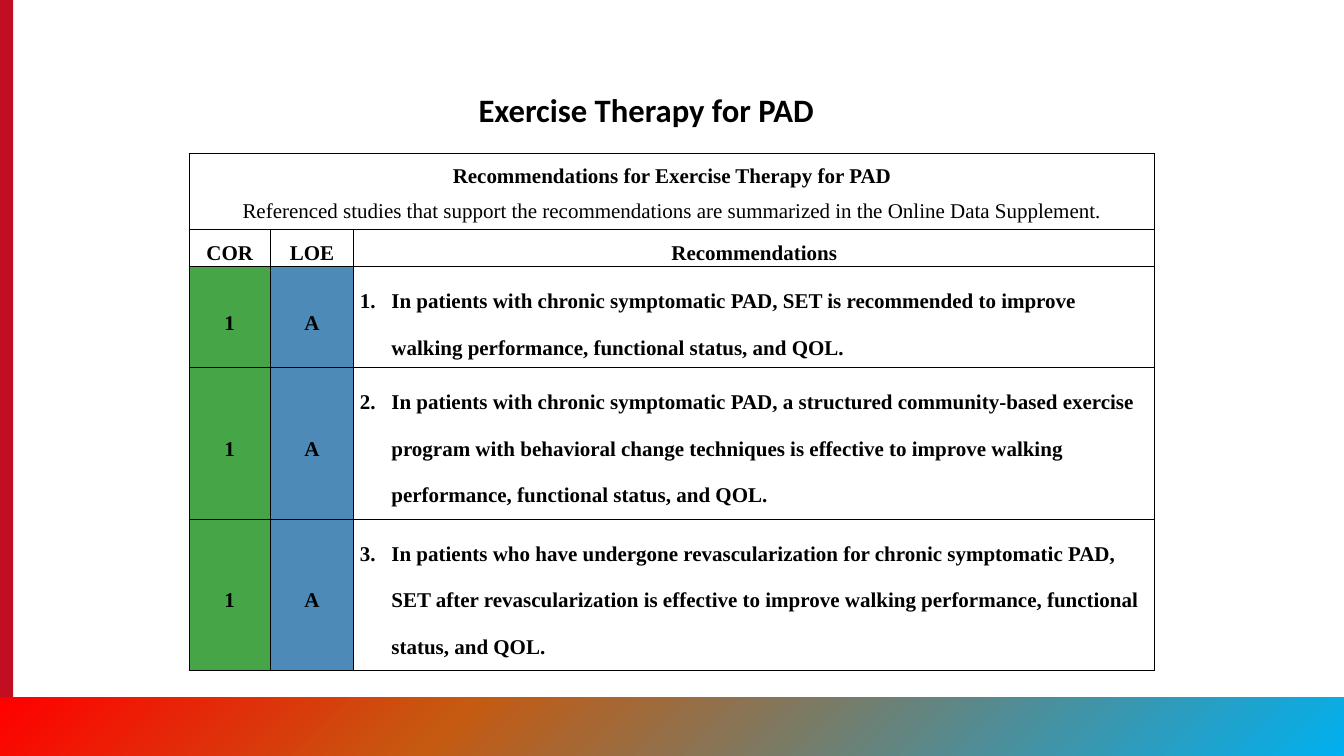
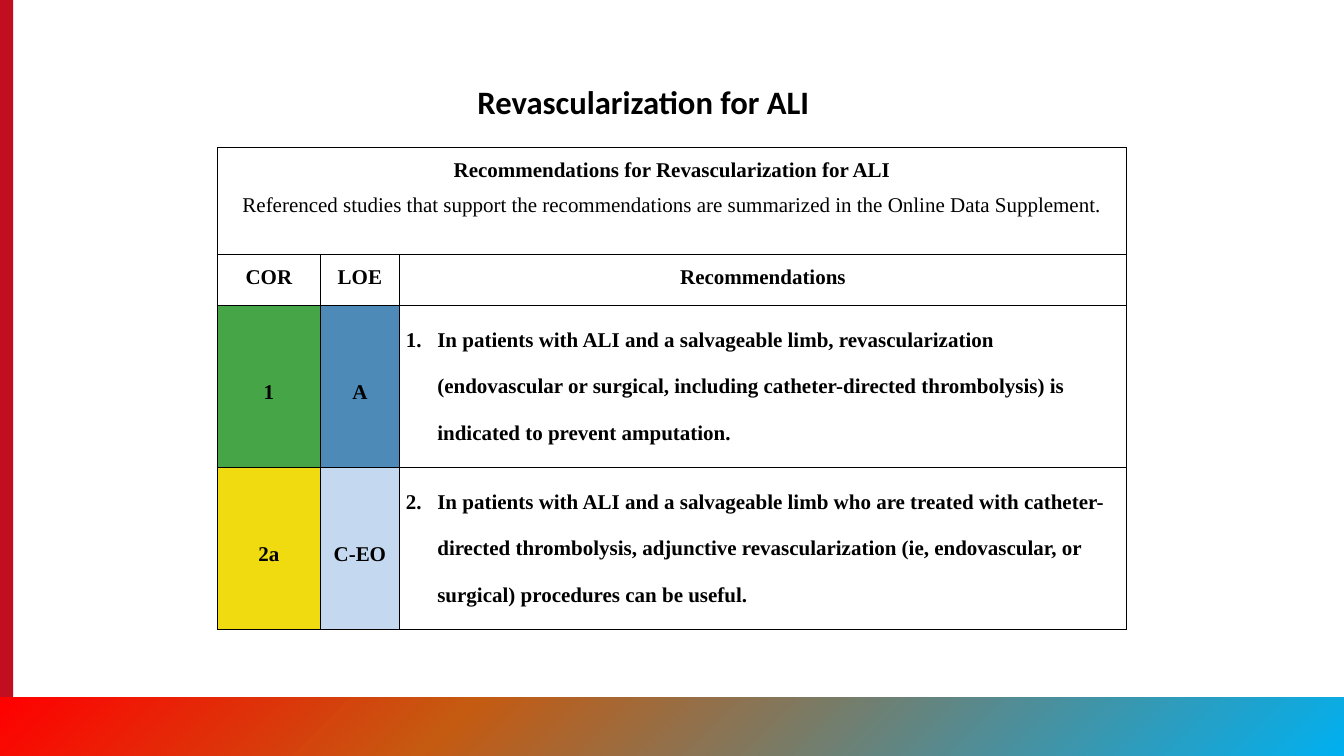
import pptx
import pptx.util
import pptx.oxml
import pptx.oxml.ns
import pptx.dml.color
import pptx.enum.shapes
import pptx.enum.text

Pt = pptx.util.Pt
RGBColor = pptx.dml.color.RGBColor
Align = pptx.enum.text.PP_ALIGN
Anchor = pptx.enum.text.MSO_ANCHOR

BLACK = RGBColor(0x00, 0x00, 0x00)
RED = RGBColor(0xC1, 0x0E, 0x21)
GREEN = RGBColor(0x45, 0xA5, 0x47)
BLUE = RGBColor(0x4E, 0x8A, 0xB7)
YELLOW = RGBColor(0xF0, 0xDA, 0x10)
PALE = RGBColor(0xC4, 0xD9, 0xF0)
STOPS = [
    (0, RGBColor(0x00, 0xB0, 0xF0)),
    (66, RGBColor(0xC5, 0x5A, 0x11)),
    (100, RGBColor(0xFF, 0x00, 0x00)),
]

WIDTH, HEIGHT = 1152, 648
BAND = 50.4
TITLE_FONT = "Calibri"
TABLE_FONT = "Times New Roman"
SOURCE = ("Referenced studies that support the recommendations "
          "are summarized in the Online Data Supplement.")
HEADS = ["COR", "LOE", "Recommendations"]
FILLS = {"1": GREEN, "2a": YELLOW, "A": BLUE, "C-EO": PALE}


def make(xml):
    head, tail = xml.split(" ", 1)
    return pptx.oxml.parse_xml(f"{head} {pptx.oxml.ns.nsdecls('a')} {tail}")


def style(para, font, size, bold=True):
    for run in para.runs:
        run.font.name = font
        run.font.size = Pt(size)
        run.font.bold = bold
        run.font.color.rgb = BLACK


def add_bar(slide, left, top, width, height):
    bar = slide.shapes.add_shape(
        pptx.enum.shapes.MSO_SHAPE.RECTANGLE,
        Pt(left), Pt(top), Pt(width), Pt(height))
    bar.shadow.inherit = False
    bar.line.fill.background()
    bar.fill.solid()
    bar.fill.fore_color.rgb = RED
    return bar


def blend(bar):
    stops = "".join(
        f'<a:gs pos="{place * 1000}"><a:srgbClr val="{color}"/></a:gs>'
        for place, color in STOPS)
    grad = make(f'<a:gradFill rotWithShape="1"><a:gsLst>{stops}</a:gsLst>'
                '<a:lin ang="2700000" scaled="0"/></a:gradFill>')
    props = bar.element.spPr
    props.replace(props.find(pptx.oxml.ns.qn("a:solidFill")), grad)
    bar.rotation = 180


def share(layout, bars):
    for count, bar in enumerate(bars):
        bar.element.xpath(".//p:cNvPr")[0].set("id", str(50 + count))
        layout.shapes.element.append(bar.element)


def set_title(slide, text, left, top):
    title = slide.shapes.title
    title.left, title.top = Pt(left), Pt(top)
    title.width, title.height = Pt(346), Pt(48)
    frame = title.text_frame
    frame.text = text
    frame.auto_size = pptx.enum.text.MSO_AUTO_SIZE.NONE
    frame.vertical_anchor = Anchor.BOTTOM
    para = frame.paragraphs[0]
    para.alignment = Align.LEFT
    para.line_spacing = 0.9
    style(para, TITLE_FONT, 28)


def edge(cell):
    props = cell._tc.get_or_add_tcPr()
    for side in "LRTB":
        props.append(make(
            f'<a:ln{side} w="12700"><a:solidFill><a:srgbClr val="{BLACK}"/>'
            f'</a:solidFill></a:ln{side}>'))


def dress(cell, fill=None):
    edge(cell)
    cell.margin_left = cell.margin_right = Pt(5.4)
    cell.margin_top = cell.margin_bottom = 0
    if fill is None:
        cell.fill.background()
    else:
        cell.fill.solid()
        cell.fill.fore_color.rgb = fill


def center(cell, *lines):
    frame = cell.text_frame
    frame.text = "\n".join(lines)
    for spot, para in enumerate(frame.paragraphs):
        para.alignment = Align.CENTER
        para.line_spacing = 1.5
        style(para, TABLE_FONT, 18, spot == 0)


def number(cell, start, text):
    cell.text_frame.text = text
    para = cell.text_frame.paragraphs[0]
    props = para._p.get_or_add_pPr()
    props.set("marL", str(Pt(27)))
    props.set("indent", str(-Pt(27)))
    props.append(make(f'<a:buAutoNum type="arabicPeriod" startAt="{start}"/>'))
    props.append(make(f'<a:tabLst ><a:tab pos="{Pt(36)}" algn="l"/></a:tabLst>'))
    para.line_spacing = 2.0
    style(para, TABLE_FONT, 18)


def add_grid(slide, spot, cols, rows, head, items):
    frame = slide.shapes.add_table(
        len(rows), len(cols), Pt(spot[0]), Pt(spot[1]),
        Pt(sum(cols)), Pt(sum(rows)))
    table = frame.table
    table.first_row = table.horz_banding = False
    for col, width in zip(table.columns, cols):
        col.width = Pt(width)
    for row, tall in zip(table.rows, rows):
        row.height = Pt(tall)
    for row in range(2):
        for col in range(len(cols)):
            dress(table.cell(row, col))
    table.cell(0, 0).merge(table.cell(0, len(cols) - 1))
    center(table.cell(0, 0), head, SOURCE)
    for col, text in enumerate(HEADS):
        center(table.cell(1, col), text)
    for count, (*grades, text) in enumerate(items, 1):
        for col, grade in enumerate(grades):
            cell = table.cell(count + 1, col)
            dress(cell, FILLS[grade])
            cell.vertical_anchor = Anchor.MIDDLE
            center(cell, grade)
        cell = table.cell(count + 1, 2)
        dress(cell)
        number(cell, count, text)


def main():
    deck = pptx.Presentation()
    deck.slide_width, deck.slide_height = Pt(WIDTH), Pt(HEIGHT)
    layout = deck.slide_layouts[5]

    slide = deck.slides.add_slide(layout)
    side = add_bar(slide, 0, 0, 11.3, HEIGHT)
    base = add_bar(slide, 0, HEIGHT - BAND, WIDTH, BAND)
    blend(base)
    share(layout, [side, base])

    set_title(slide, "Exercise Therapy for PAD", 403, 66.5)
    add_grid(
        slide, (162, 131.5), [69.8, 71.3, 686.9],
        [65.5, 31.5, 86.6, 130, 129.6],
        "Recommendations for Exercise Therapy for PAD",
        [("1", "A", "In patients with chronic symptomatic PAD, SET is recommended "
          "to improve walking performance, functional status, and QOL."),
         ("1", "A", "In patients with chronic symptomatic PAD, a structured "
          "community-based exercise program with behavioral change techniques is "
          "effective to improve walking performance, functional status, and QOL."),
         ("1", "A", "In patients who have undergone revascularization for chronic "
          "symptomatic PAD, SET after revascularization is effective to improve "
          "walking performance, functional status, and QOL.")])

    slide = deck.slides.add_slide(layout)
    set_title(slide, "Revascularization for ALI", 402, 60)
    add_grid(
        slide, (186.5, 126.2), [88, 68, 623], [92, 43.5, 139, 139],
        "Recommendations for Revascularization for ALI",
        [("1", "A", "In patients with ALI and a salvageable limb, "
          "revascularization (endovascular or surgical, including "
          "catheter-directed thrombolysis) is indicated to prevent amputation."),
         ("2a", "C-EO", "In patients with ALI and a salvageable limb who are "
          "treated with catheter-directed thrombolysis, adjunctive "
          "revascularization (ie, endovascular, or surgical) procedures can be "
          "useful.")])

    deck.save("out.pptx")


if __name__ == "__main__":
    main()
